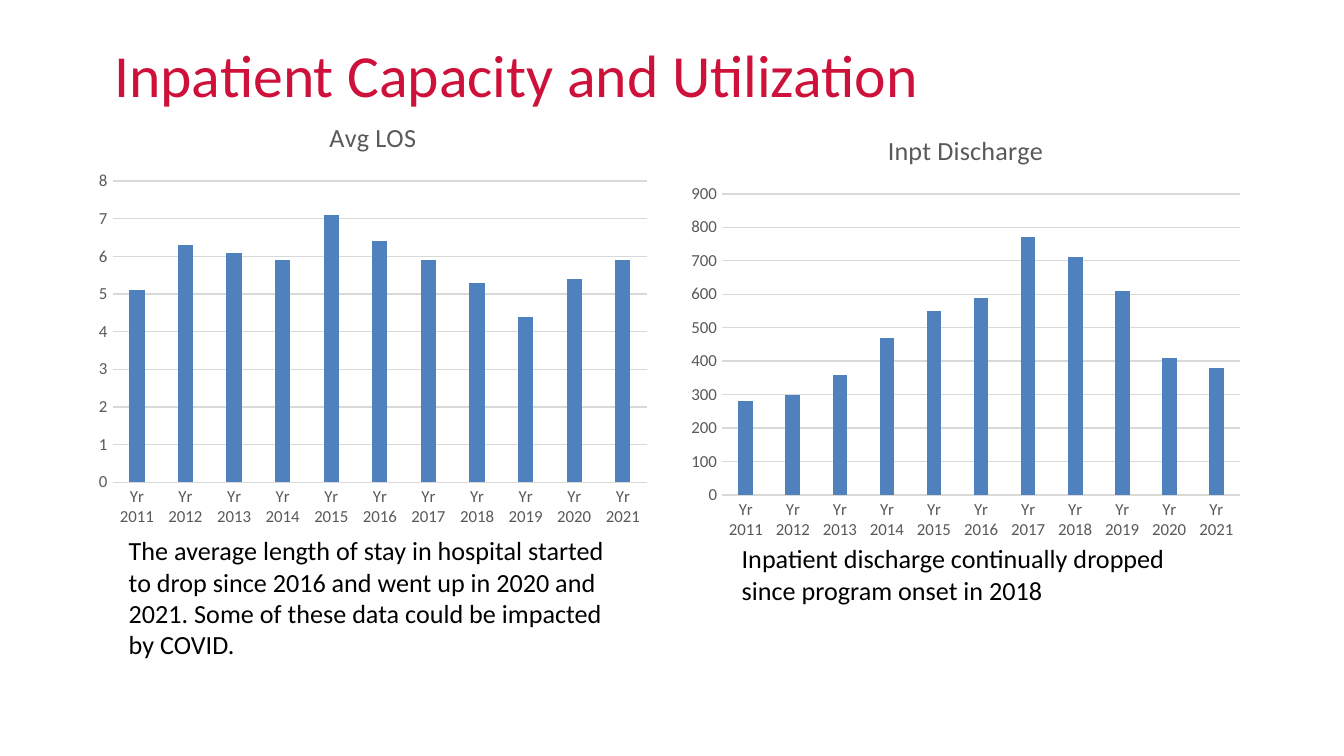
from dataclasses import dataclass

from pptx import Presentation
from pptx import util as u
from pptx.chart import data as chart_data
from pptx.dml.color import RGBColor
from pptx.enum import chart as charts, text

COLUMNS, ROWS = 100, 56.25
CELL = u.Inches(0.1)


@dataclass(frozen=True)
class Theme:
    font: str = "Calibri"
    title_color: str = "CD113B"
    body_color: str = "000000"
    label_color: str = "595959"
    rule_color: str = "D9D9D9"
    bar_color: str = "4F81BD"
    title_size: int = 32
    body_size: int = 14
    chart_size: int = 10
    axis_size: int = 9
    rule_width: float = 0.75


def set_font(font, name, size, color):
    font.name, font.size, font.bold = name, u.Pt(size), False
    font.color.rgb = RGBColor.from_string(color)


def write(frame, words, *, name, size, color):
    para = frame.paragraphs[0]
    para.alignment = text.PP_ALIGN.LEFT
    span = para.add_run()
    span.text = words
    set_font(span.font, name, size, color)


def grid(*cells):
    """Turn left, top, width and height in grid cells into lengths."""
    return [u.Emu(round(cell * CELL)) for cell in cells]


class SlideBuilder:
    def __init__(self, deck, theme):
        self.theme = theme
        self.slide = deck.slides.add_slide(deck.slide_layouts[5])

    def title(self, words, place):
        box = self.slide.shapes.title
        box.left, box.top, box.width, box.height = grid(*place)
        frame = box.text_frame
        frame.auto_size = text.MSO_AUTO_SIZE.NONE
        frame.vertical_anchor = text.MSO_ANCHOR.TOP
        write(frame, words, name=self.theme.font,
              size=self.theme.title_size, color=self.theme.title_color)

    def note(self, words, place):
        box = self.slide.shapes.add_textbox(*grid(*place))
        frame = box.text_frame
        frame.word_wrap = True
        frame.auto_size = text.MSO_AUTO_SIZE.SHAPE_TO_FIT_TEXT
        write(frame, words, name=self.theme.font,
              size=self.theme.body_size, color=self.theme.body_color)

    def rule(self, line):
        line.color.rgb = RGBColor.from_string(self.theme.rule_color)
        line.width = u.Pt(self.theme.rule_width)

    def column_chart(self, name, categories, values, place, top, step):
        theme = self.theme
        data = chart_data.CategoryChartData()
        data.categories = categories
        data.add_series(name, values)
        chart = self.slide.shapes.add_chart(
            charts.XL_CHART_TYPE.COLUMN_CLUSTERED, *grid(*place), data).chart
        set_font(chart.font, theme.font, theme.chart_size, theme.body_color)
        chart.has_legend = False
        chart.has_title = True
        write(chart.chart_title.text_frame, name, name=theme.font,
              size=theme.body_size, color=theme.label_color)

        plot = chart.plots[0]
        plot.gap_width, plot.overlap = 219, -27
        plot.vary_by_categories = False
        fill = plot.series[0].format.fill
        fill.solid()
        fill.fore_color.rgb = RGBColor.from_string(theme.bar_color)

        for axis in (chart.category_axis, chart.value_axis):
            axis.major_tick_mark = axis.minor_tick_mark = charts.XL_TICK_MARK.NONE
            set_font(axis.tick_labels.font, theme.font, theme.axis_size,
                     theme.label_color)
        self.rule(chart.category_axis.format.line)
        value_axis = chart.value_axis
        value_axis.minimum_scale, value_axis.maximum_scale = 0, top
        value_axis.major_unit = step
        value_axis.format.line.fill.background()
        value_axis.has_major_gridlines = True
        self.rule(value_axis.major_gridlines.format.line)


def main():
    deck = Presentation()
    deck.slide_width, deck.slide_height = grid(COLUMNS, ROWS)
    page = SlideBuilder(deck, Theme())
    years = [f"Yr {year}" for year in range(2011, 2022)]

    page.title("Inpatient Capacity and Utilization", (7.5, 2.3, 85, 13.1))
    page.column_chart(
        "Avg LOS", years,
        [5.1, 6.3, 6.1, 5.9, 7.1, 6.4, 5.9, 5.3, 4.4, 5.4, 5.9],
        (6.5, 7.35, 42.5, 32.5), top=8, step=1)
    page.column_chart(
        "Inpt Discharge", years,
        [280, 300, 360, 470, 550, 590, 770, 710, 610, 410, 380],
        (50.6, 8.3, 42.5, 32.5), top=900, step=100)
    page.note("The average length of stay in hospital started to drop since "
              "2016 and went up in 2020 and 2021. Some of these data could be "
              "impacted by COVID.", (8.6, 39.3, 38.3, 10.4))
    page.note("Inpatient discharge continually dropped since program onset "
              "in 2018", (54.2, 39.9, 36.2, 5.7))
    deck.save("out.pptx")


if __name__ == "__main__":
    main()
